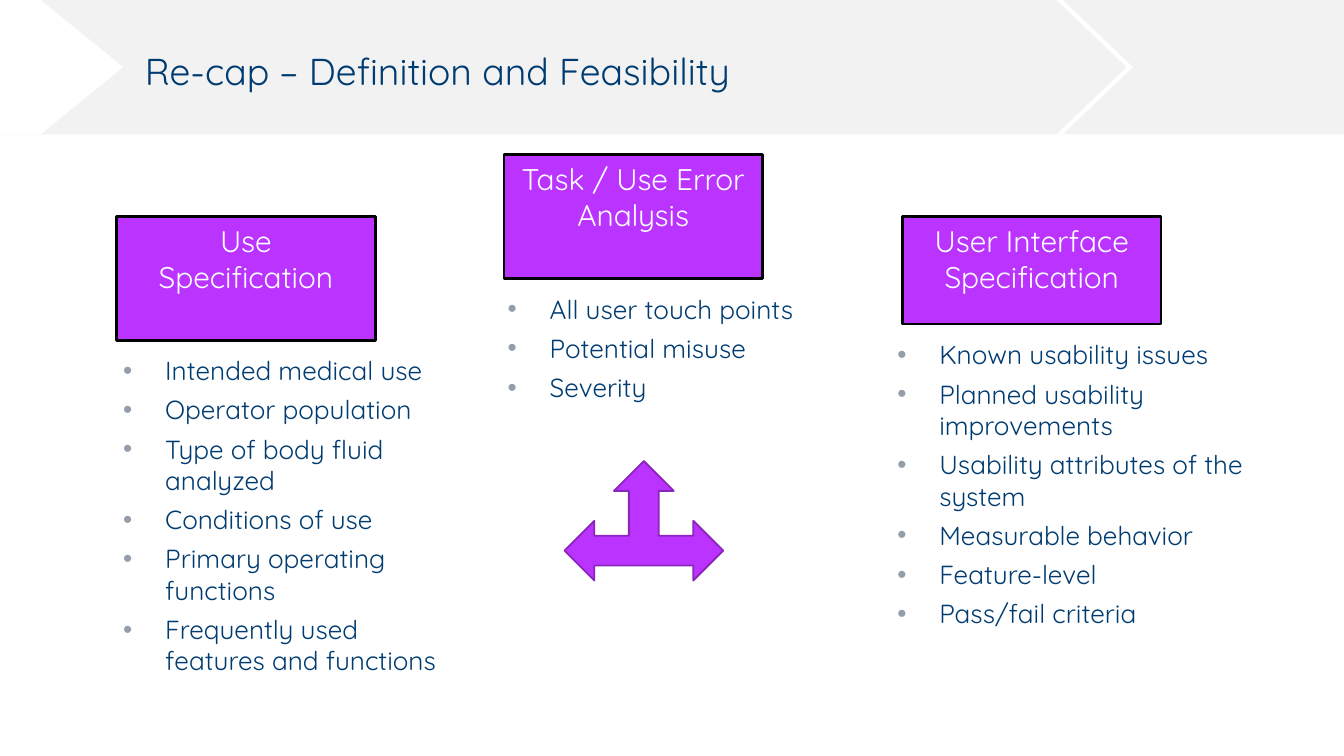
from lxml import etree
from pptx import Presentation
from pptx import util as u
from pptx.dml.color import RGBColor
from pptx.enum import shapes, text
from pptx.oxml.ns import qn

NAVY = RGBColor(0x00, 0x3C, 0x71)
PURPLE = RGBColor(0xBB, 0x33, 0xFF)
DARK_PURPLE = RGBColor(0x8A, 0x26, 0xBD)
GREY = RGBColor(0xF2, 0xF2, 0xF2)
WHITE = RGBColor(0xFF, 0xFF, 0xFF)
BLACK = RGBColor(0, 0, 0)
BULLET_GREY = "949EAA"
KIND = shapes.MSO_SHAPE


def write(p, content, size=14, color=NAVY, align=text.PP_ALIGN.LEFT, after=0, spacing=1.0):
    p.alignment, p.space_after, p.line_spacing = align, u.Pt(after), spacing
    r = p.add_run()
    r.text = content
    r.font.name, r.font.size, r.font.color.rgb = "Quicksand", u.Pt(size), color


class Deck:
    """Holds the style and the current slide, and draws each kind of element."""

    def __init__(self, width, height):
        self.prs = Presentation()
        self.prs.slide_width, self.prs.slide_height = u.Pt(width), u.Pt(height)
        self.s = self.prs.slides.add_slide(self.prs.slide_layouts[6])

    def shape(self, kind, box, fill, line=None, weight=1, adj=None):
        sp = self.s.shapes.add_shape(kind, *map(u.Pt, box))
        sp.shadow.inherit = False
        sp.fill.solid()
        sp.fill.fore_color.rgb = fill
        if line is None:
            sp.line.fill.background()
        else:
            sp.line.color.rgb, sp.line.width = line, u.Pt(weight)
        if adj is not None:
            sp.adjustments[0] = adj
        return sp

    def textbox(self, box):
        tf = self.s.shapes.add_textbox(*map(u.Pt, box)).text_frame
        tf.word_wrap = True
        return tf

    def title(self, content, box):
        tf = self.textbox(box)
        tf.vertical_anchor = text.MSO_ANCHOR.MIDDLE
        write(tf.paragraphs[0], content, size=20, spacing=0.9)

    def heading(self, content, box):
        tf = self.shape(KIND.RECTANGLE, box, PURPLE, BLACK, 1.5).text_frame
        tf.word_wrap = True
        tf.vertical_anchor = text.MSO_ANCHOR.TOP
        write(tf.paragraphs[0], content, size=16, color=WHITE, align=text.PP_ALIGN.CENTER)

    def bullets(self, items, box):
        tf = self.textbox(box)
        tf.margin_left = tf.margin_top = tf.margin_right = tf.margin_bottom = 0
        for i, item in enumerate(items):
            p = tf.add_paragraph() if i else tf.paragraphs[0]
            pPr = p._p.get_or_add_pPr()
            pPr.set("marL", str(u.Pt(34.5)))
            pPr.set("indent", str(u.Pt(-22.5)))
            color = etree.SubElement(pPr, qn("a:buClr"))
            etree.SubElement(color, qn("a:srgbClr"), val=BULLET_GREY)
            etree.SubElement(pPr, qn("a:buFont"), typeface="Arial")
            etree.SubElement(pPr, qn("a:buChar"), char="•")
            write(p, item, after=4.2)


COLUMNS = [
    ("Task / Use Error Analysis", (270, 82.8, 138.5, 66.5), (260, 157, 186, 66),
     ["All user touch points", "Potential misuse", "Severity"]),
    ("Use Specification", (62.5, 116, 138.5, 66.5), (54, 190, 192, 191.5),
     ["Intended medical use", "Operator population", "Type of body fluid analyzed",
      "Conditions of use", "Primary operating functions",
      "Frequently used features and functions"]),
    ("User Interface Specification", (483.5, 116, 138.5, 57.6), (468.7, 181.5, 211.7, 178),
     ["Known usability issues", "Planned usability improvements",
      "Usability attributes of the system", "Measurable behavior", "Feature-level",
      "Pass/fail criteria"]),
]


def main():
    deck = Deck(720, 405)
    deck.shape(KIND.RECTANGLE, (0, 0, 720, 72), GREY)
    deck.shape(KIND.CHEVRON, (566, 0, 41, 72), WHITE, adj=0.92)
    deck.shape(KIND.PENTAGON, (0, 0, 66, 72), WHITE, adj=0.67)
    deck.title("Re-cap – Definition and Feasibility", (70.5, 19.5, 630, 39.5))
    for heading, heading_box, list_box, items in COLUMNS:
        deck.heading(heading, heading_box)
        deck.bullets(items, list_box)
    deck.shape(KIND.LEFT_RIGHT_UP_ARROW, (302.4, 247, 85, 64), PURPLE, DARK_PURPLE)
    deck.prs.save("out.pptx")


if __name__ == "__main__":
    main()
